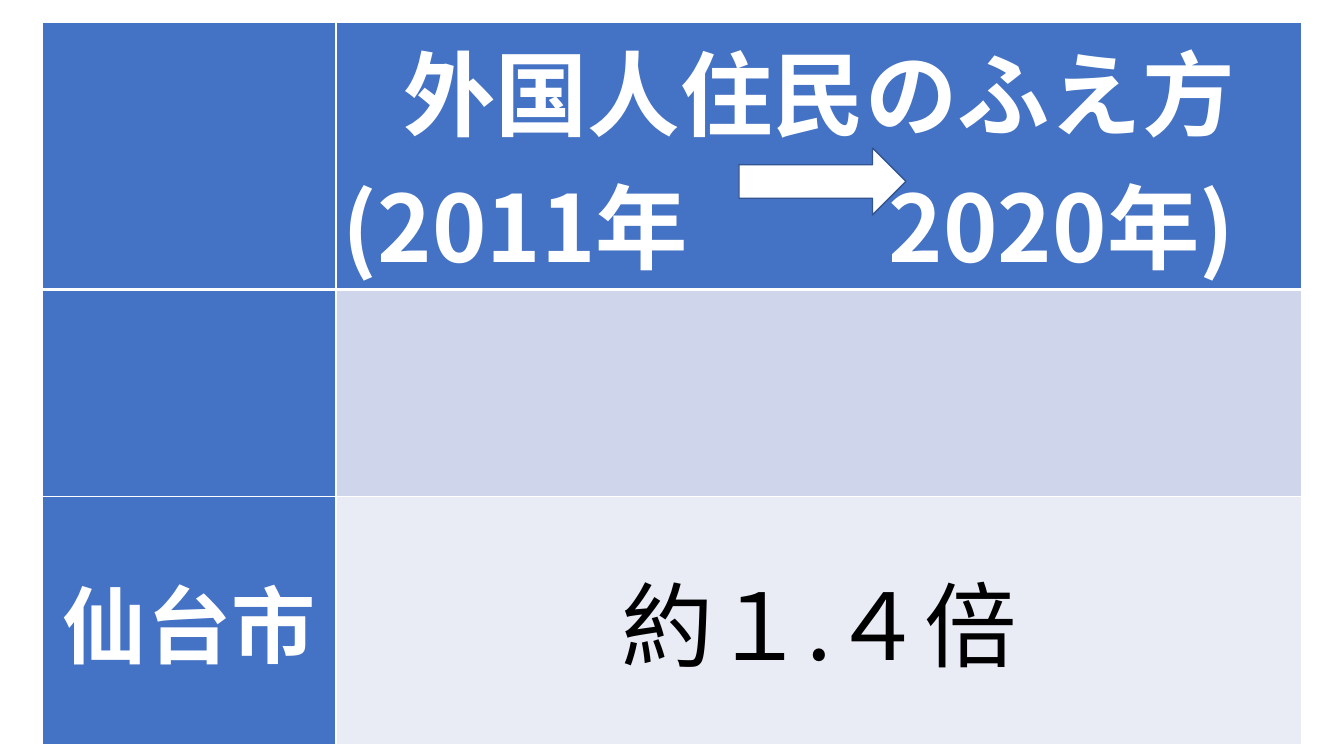
"""Build the slide on the growth of foreign residents in Sendai."""
from lxml.etree import SubElement
from pptx import Presentation
from pptx.dml.color import RGBColor
from pptx.enum.shapes import MSO_SHAPE as Shape
from pptx.enum.text import MSO_ANCHOR as Anchor, PP_ALIGN as Align
from pptx.oxml.ns import qn
from pptx.util import Pt

PX = 9071
FONT = "Noto Sans CJK JP"
WHITE = RGBColor(0xFF, 0xFF, 0xFF)
BLACK = RGBColor(0x00, 0x00, 0x00)
BLUE = RGBColor(0x44, 0x72, 0xC4)
PALE_BLUE = RGBColor(0xCF, 0xD5, 0xEA)
PALEST_BLUE = RGBColor(0xE9, 0xEB, 0xF5)
ARROW_EDGE = RGBColor(0x32, 0x54, 0x91)

COLUMN_WIDTHS = (294, 966)
ROW_HEIGHTS = (230, 207, 248)
FILLS = ((BLUE, BLUE), (BLUE, PALE_BLUE), (BLUE, PALEST_BLUE))
SECOND_YEAR_TAB = 546


def px(length):
    """Turn pixels into EMU."""
    return length * PX


def set_borders(cell, top, bottom):
    """Draw white borders, with the top and bottom widths in points."""
    properties = cell._tc.get_or_add_tcPr()
    sides = (("lnL", 1), ("lnR", 1), ("lnT", top), ("lnB", bottom))
    for index, (side, width) in enumerate(sides):
        line = SubElement(properties, qn(f"a:{side}"), w=str(Pt(width)))
        fill = SubElement(line, qn("a:solidFill"))
        SubElement(fill, qn("a:srgbClr"), val=str(WHITE))
        properties.insert(index, line)


def add_run(paragraph, text, size, color, bold):
    """Add one run in the slide font."""
    run = paragraph.add_run()
    run.text = text
    run.font.name = FONT
    run.font.size = Pt(size)
    run.font.bold = bold
    run.font.color.rgb = color
    SubElement(run._r.get_or_add_rPr(), qn("a:ea"), typeface=FONT)


def write_cell(cell, lines, size, color=WHITE, bold=True, anchor=Anchor.MIDDLE):
    """Fill a cell with centred lines; a line with a tab starts at the left."""
    cell.margin_left = cell.margin_right = px(7)
    cell.margin_top = cell.margin_bottom = 0
    cell.vertical_anchor = anchor
    frame = cell.text_frame
    for index, text in enumerate(lines):
        paragraph = frame.add_paragraph() if index else frame.paragraphs[0]
        paragraph.alignment = Align.CENTER
        if "\t" in text:
            paragraph.alignment = Align.LEFT
            stops = SubElement(paragraph._p.get_or_add_pPr(), qn("a:tabLst"))
            SubElement(stops, qn("a:tab"), pos=str(px(SECOND_YEAR_TAB)), algn="l")
        add_run(paragraph, text, size, color, bold)


def add_growth_table(slide):
    """Add the table with its sizes, fills and borders."""
    table = slide.shapes.add_table(
        len(ROW_HEIGHTS), len(COLUMN_WIDTHS), px(42), px(22),
        px(sum(COLUMN_WIDTHS)), px(sum(ROW_HEIGHTS))).table
    for column, width in zip(table.columns, COLUMN_WIDTHS):
        column.width = px(width)
    for index, (row, height) in enumerate(zip(table.rows, ROW_HEIGHTS)):
        row.height = px(height)
        for cell, color in zip(row.cells, FILLS[index]):
            cell.fill.solid()
            cell.fill.fore_color.rgb = color
            set_borders(cell, 3 if index == 1 else 1, 3 if index == 0 else 1)
    return table


def add_arrow(slide, left, top, width, height):
    """Add the white arrow between the two years."""
    arrow = slide.shapes.add_shape(
        Shape.RIGHT_ARROW, px(left), px(top), px(width), px(height))
    arrow.shadow.inherit = False
    arrow.fill.solid()
    arrow.fill.fore_color.rgb = WHITE
    arrow.line.color.rgb = ARROW_EDGE
    arrow.line.width = Pt(1)


def main():
    """Build and save the presentation."""
    presentation = Presentation()
    presentation.slide_width = px(1344)
    presentation.slide_height = px(756)
    slide = presentation.slides.add_slide(presentation.slide_layouts[6])
    table = add_growth_table(slide)
    heading = ("外国人住民のふえ方", "(2011年\t2020年)")
    write_cell(table.cell(0, 1), heading, 66, anchor=Anchor.TOP)
    write_cell(table.cell(2, 0), ("仙台市",), 60)
    write_cell(table.cell(2, 1), ("約１.４倍",), 66, BLACK, False)
    add_arrow(slide, 739, 148, 167, 67)
    presentation.save("out.pptx")


if __name__ == "__main__":
    main()
